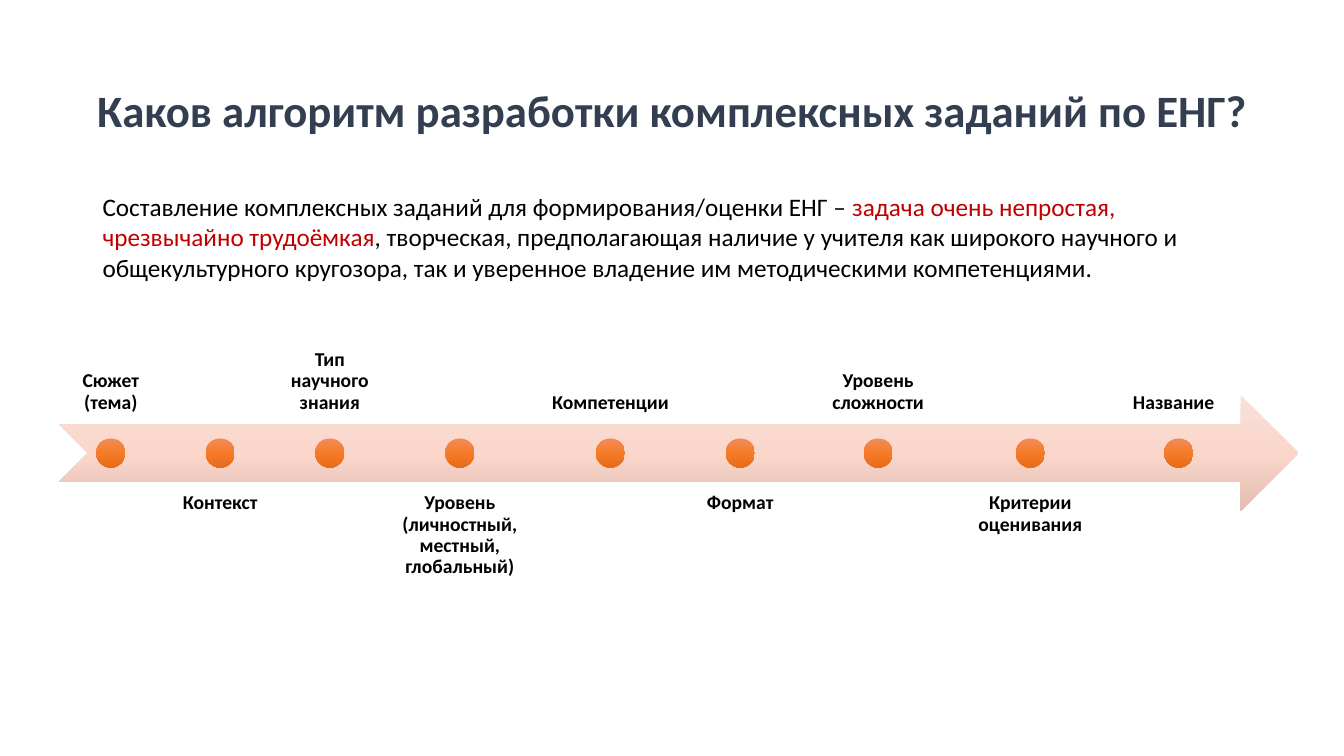
from copy import deepcopy
from dataclasses import dataclass

from pptx import Presentation
from pptx.dml.color import RGBColor
from pptx.enum.shapes import MSO_SHAPE as Preset
from pptx.enum.text import MSO_ANCHOR as Anchor, PP_ALIGN as Align
from pptx.shapes.autoshape import Shape
from pptx.slide import Slide
from pptx.text.text import TextFrame, _Paragraph as Paragraph
from pptx.util import Pt

FONT = "Calibri"
BLACK, NAVY, RED = "000000", "333F50", "C00000"
ARROW_SHADES = ["FAE0D8", "FAD6CB", "E2BCB1"]
DOT_SHADES = ["F18C57", "F67B28", "E56C19"]

ARROW_LEFT, ARROW_TOP, ARROW_WIDTH, ARROW_HEIGHT = 42, 282.2, 885.6, 82.8
AXIS_Y = ARROW_TOP + ARROW_HEIGHT / 2
DOT_SIZE = 20.8
LABEL_TOPS = (220.4, 344.2)  # above the arrow, below it
LABEL_HEIGHT = 82.8


@dataclass(frozen=True)
class Step:
    text: str
    center: float
    width: float = 74.2
    dot_shift: float = 0


STEPS = [
    Step("Сюжет (тема)", 79.2),
    Step("Контекст", 157.3),
    Step("Тип научного знания", 235.6),
    Step("Уровень (личностный, местный, глобальный)", 328.5, 103.7),
    Step("Компетенции", 436, 104.4),
    Step("Формат", 528.8),
    Step("Уровень сложности", 627.3, 88.6),
    Step("Критерии оценивания", 736, 98.6),
    Step("Название", 838.4, dot_shift=3.6),
]


def color(value: str) -> RGBColor:
    return RGBColor.from_string(value)


def add_text_area(slide: Slide, left: float, top: float, width: float,
                  height: float, anchor: Anchor) -> TextFrame:
    box = slide.shapes.add_textbox(Pt(left), Pt(top), Pt(width), Pt(height))
    frame = box.text_frame
    frame.word_wrap = True
    frame.vertical_anchor = anchor
    return frame


def add_run(paragraph: Paragraph, text: str, size: float,
            shade: str = BLACK, bold: bool = False) -> None:
    run = paragraph.add_run()
    run.text = text
    run.font.name = FONT
    run.font.size = Pt(size)
    run.font.bold = bold
    run.font.color.rgb = color(shade)


def add_shaded_shape(slide: Slide, preset: Preset, left: float, top: float,
                     width: float, height: float, shades: list[str]) -> Shape:
    """Add a borderless shape with a three-stop gradient from top to bottom."""
    shape = slide.shapes.add_shape(preset, Pt(left), Pt(top), Pt(width), Pt(height))
    shape.shadow.inherit = False
    shape.line.fill.background()
    shape.fill.gradient()
    shape.fill.gradient_angle = 270
    first_stop = shape.fill._fill._gradFill.gsLst[0]
    first_stop.addnext(deepcopy(first_stop))
    for index, (stop, shade) in enumerate(zip(shape.fill.gradient_stops, shades)):
        stop.position = index / 2
        stop.color.rgb = color(shade)
    return shape


def add_step(slide: Slide, step: Step, below: bool) -> None:
    label = add_text_area(slide, step.center - step.width / 2, LABEL_TOPS[below],
                          step.width, LABEL_HEIGHT,
                          Anchor.TOP if below else Anchor.BOTTOM)
    label.margin_left = label.margin_right = Pt(7.9)
    label.margin_top = label.margin_bottom = Pt(7.9)
    paragraph = label.paragraphs[0]
    paragraph.alignment = Align.CENTER
    paragraph.line_spacing = 0.9
    paragraph.space_after = Pt(4.9)
    add_run(paragraph, step.text, 14, bold=True)
    add_shaded_shape(slide, Preset.OVAL,
                     step.center + step.dot_shift - DOT_SIZE / 2,
                     AXIS_Y - DOT_SIZE / 2, DOT_SIZE, DOT_SIZE, DOT_SHADES)


def main() -> None:
    deck = Presentation()
    deck.slide_width, deck.slide_height = Pt(960), Pt(540)
    slide = deck.slides.add_slide(deck.slide_layouts[6])

    title = add_text_area(slide, 51.8, 28.8, 857.5, 104.4, Anchor.MIDDLE).paragraphs[0]
    title.alignment = Align.CENTER
    title.line_spacing = 0.9
    add_run(title, "Каков алгоритм разработки комплексных заданий по ЕНГ?",
            32, NAVY, bold=True)

    intro = add_text_area(slide, 66.2, 133.2, 828, 72.7, Anchor.TOP).paragraphs[0]
    add_run(intro, "Составление комплексных заданий для формирования/оценки ЕНГ – ", 18)
    add_run(intro, "задача очень непростая, чрезвычайно трудоёмкая", 18, RED)
    add_run(intro, ", творческая, предполагающая наличие у учителя как широкого "
                   "научного и общекультурного кругозора, так и уверенное владение "
                   "им методическими компетенциями.", 18)

    add_shaded_shape(slide, Preset.NOTCHED_RIGHT_ARROW, ARROW_LEFT, ARROW_TOP,
                     ARROW_WIDTH, ARROW_HEIGHT, ARROW_SHADES)
    for index, step in enumerate(STEPS):
        add_step(slide, step, below=index % 2 == 1)

    deck.save("out.pptx")


if __name__ == "__main__":
    main()
